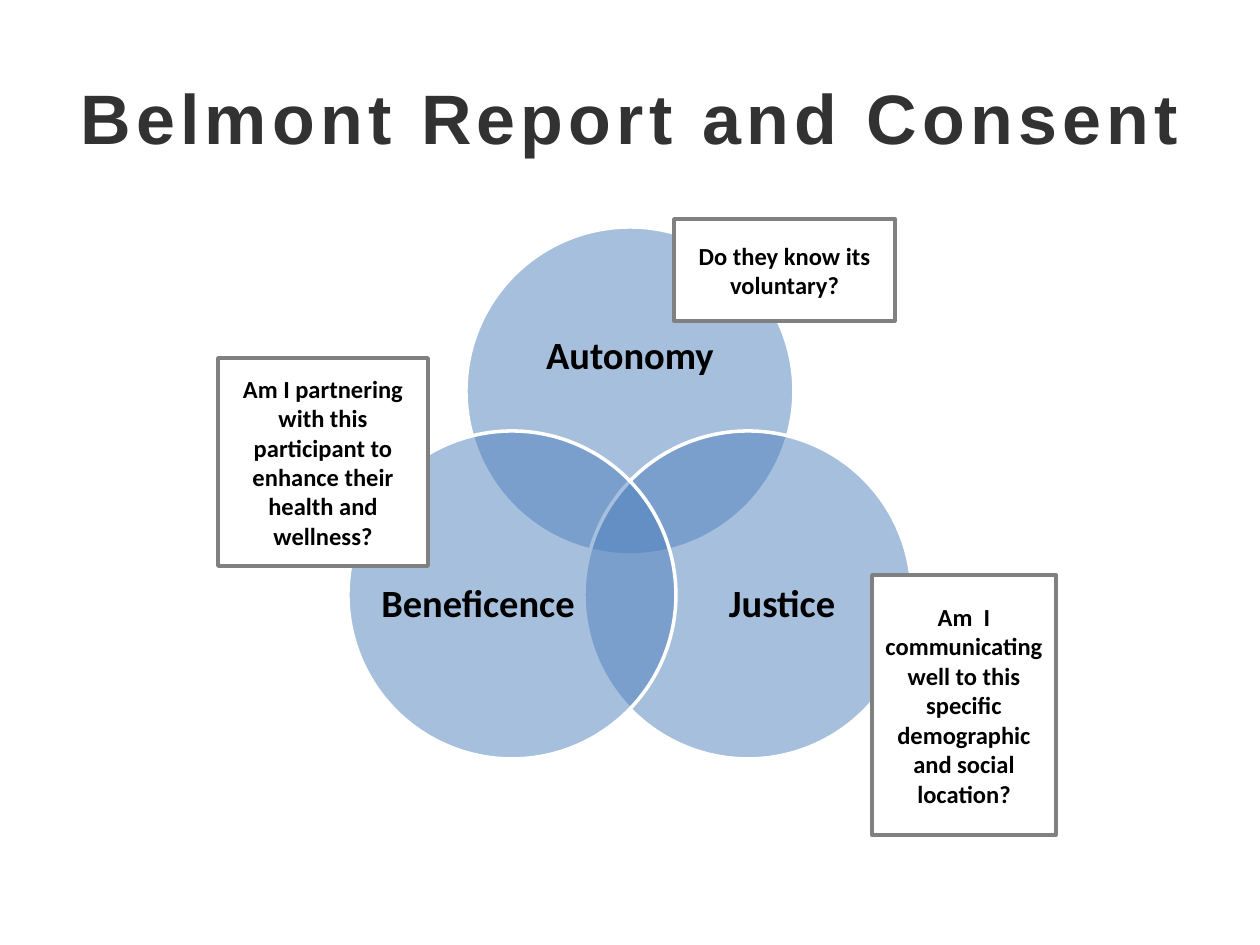
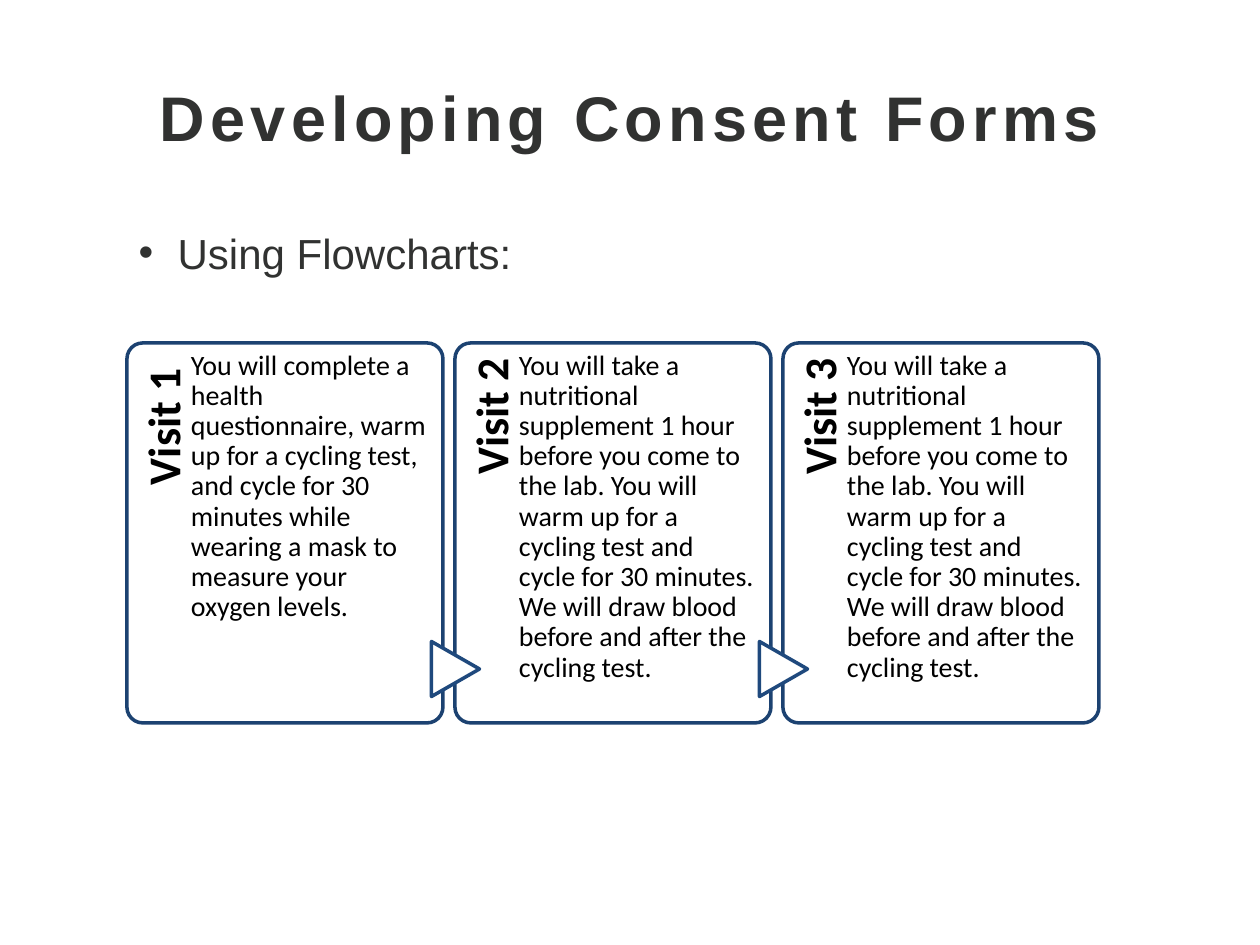
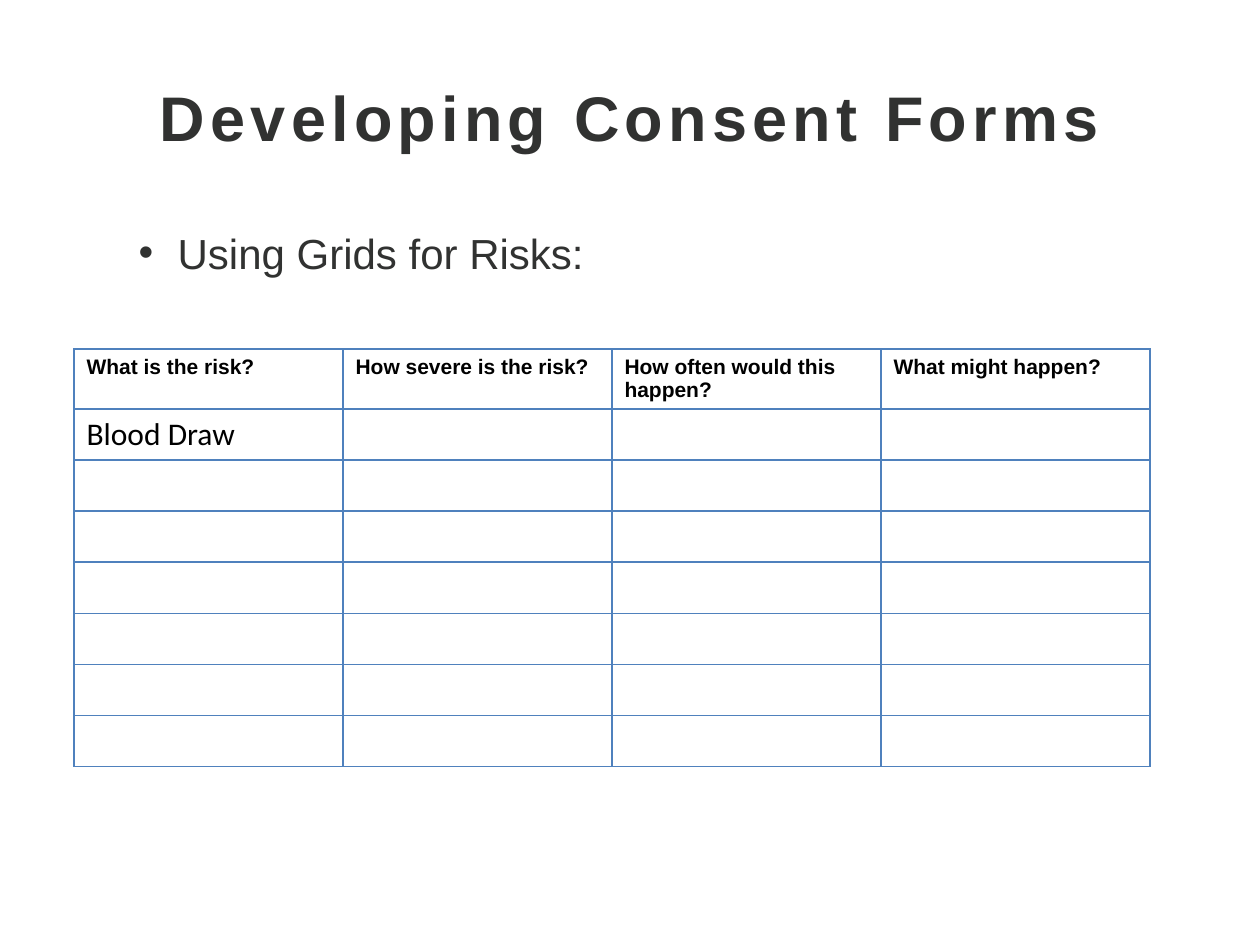
import math

import pptx
import pptx.dml.color
import pptx.enum.shapes
import pptx.enum.text
import pptx.oxml
import pptx.oxml.ns
import pptx.util

PX = 914400 / 126
COLORS = {
    "title": "313231", "text": "000000", "paper": "FFFFFF", "accent": "4F81BD",
    "question_line": "808080", "panel_line": "1C4271", "arrow_line": "1F497D",
}
SHAPE = pptx.enum.shapes.MSO_SHAPE
ALIGN = pptx.enum.text.PP_ALIGN
ANCHOR = pptx.enum.text.MSO_ANCHOR
TITLE_ONLY, TITLE_AND_BODY = 5, 1

CIRCLE_SIZE = 328
VENN_CENTER = (630, 527)
VENN_RADIUS = 136
# Name, angle of the circle, label offset from the diagram center, label size
PRINCIPLES = [
    ("Autonomy", -90, (0, -170), (240, 148)),
    ("Justice", 30, (152, 78), (196, 180)),
    ("Beneficence", 150, (-152, 78), (196, 180)),
]
QUESTIONS = [
    ("Am I partnering with this participant to enhance their health and wellness?",
     (218, 358, 210, 208)),
    ("Do they know its voluntary?", (674, 219, 221, 102)),
    ("Am  I communicating well to this specific demographic and social location?",
     (872, 575, 184, 260)),
]

PANEL_LEFT, PANEL_TOP, PANEL_W, PANEL_H, PANEL_PITCH = 127, 343, 316, 380, 328
SUPPLEMENT_VISIT = (
    "You will take a nutritional supplement 1 hour before you come to the lab. "
    "You will warm up for a cycling test and cycle for 30 minutes. "
    "We will draw blood before and after the cycling test.")
VISITS = [
    ("Visit 1 ", "You will complete a health questionnaire, warm up for a cycling test, "
     "and cycle for 30 minutes while wearing a mask to measure your oxygen levels."),
    ("Visit 2", SUPPLEMENT_VISIT),
    ("Visit 3", SUPPLEMENT_VISIT),
]

RISK_HEADERS = ["What is the risk?", "How severe is the risk?",
                "How often would this happen?", "What might happen?"]
RISKS = ["Blood Draw"]
RISK_ROWS, HEADER_H, ROW_H, COLUMN_W = 7, 60, 51, 269


def px(n):
    return pptx.util.Emu(round(n * PX))


def rgb(name):
    return pptx.dml.color.RGBColor.from_string(COLORS[name])


def add_run(p, text, size, font="Calibri", color="text", bold=False):
    r = p.add_run()
    r.text = text
    r.font.size = pptx.util.Pt(size)
    r.font.name = font
    r.font.bold = bold
    r.font.color.rgb = rgb(color)
    return r


def place(sp, box):
    sp.left, sp.top, sp.width, sp.height = map(px, box)


def add_titled_slide(prs, layout, title, size):
    s = prs.slides.add_slide(prs.slide_layouts[layout])
    sp = s.shapes.title
    place(sp, (63, 38, 1134, 157))
    tf = sp.text_frame
    tf.vertical_anchor = ANCHOR.MIDDLE
    p = tf.paragraphs[0]
    p.alignment = ALIGN.CENTER
    r = add_run(p, title, size, "Arial", "title", True)
    r._r.get_or_add_rPr().set("spc", "300")
    return s


def add_bullet(s, text):
    sp = s.placeholders[1]
    place(sp, (63, 221, 1134, 624))
    p = sp.text_frame.paragraphs[0]
    p.level = 1
    pPr = p._p.get_or_add_pPr()
    pPr.set("marL", str(px(102)))
    pPr.set("indent", str(px(-39)))
    for tag, key, value in (("a:buFont", "typeface", "Arial"), ("a:buChar", "char", "•")):
        pptx.oxml.ns.qn(tag)
        bullet = pptx.oxml.parse_xml(
            f'<{tag} {pptx.oxml.ns.nsdecls("a")} {key}="{value}"/>')
        pPr.append(bullet)
    p.space_before = pptx.util.Pt(0)
    add_run(p, text, 24, "Arial", "title")


def add_shape(s, kind, box, line, fill="paper"):
    sp = s.shapes.add_shape(kind, *map(px, box))
    sp.shadow.inherit = False
    sp.fill.solid()
    sp.fill.fore_color.rgb = rgb(fill)
    sp.line.color.rgb = rgb(line)
    sp.line.width = pptx.util.Pt(2)
    return sp


def add_label(s, text, box, size, bold=False, align=ALIGN.LEFT, anchor=ANCHOR.TOP,
              top=0, right=0):
    """Add a wrapped text box whose only insets are top and right."""
    sp = s.shapes.add_textbox(*map(px, box))
    tf = sp.text_frame
    tf.word_wrap = True
    tf.vertical_anchor = anchor
    tf.margin_left = tf.margin_bottom = 0
    tf.margin_top, tf.margin_right = px(top), px(right)
    p = tf.paragraphs[0]
    p.alignment = align
    p.line_spacing = 0.9
    add_run(p, text, size, bold=bold)
    return sp


def add_principle(s, name, angle, offset, label_size):
    cx, cy = VENN_CENTER
    x = round(cx + VENN_RADIUS * math.cos(math.radians(angle)) - CIRCLE_SIZE / 2)
    y = round(cy + VENN_RADIUS * math.sin(math.radians(angle)) - CIRCLE_SIZE / 2)
    sp = add_shape(s, SHAPE.OVAL, (x, y, CIRCLE_SIZE, CIRCLE_SIZE), "paper", "accent")
    color = sp._element.spPr.find(
        pptx.oxml.ns.qn("a:solidFill")).find(pptx.oxml.ns.qn("a:srgbClr"))
    color.append(pptx.oxml.parse_xml(
        f'<a:alpha {pptx.oxml.ns.nsdecls("a")} val="50000"/>'))
    w, h = label_size
    box = (cx + offset[0] - w / 2, cy + offset[1] - h / 2, w, h)
    add_label(s, name, box, 22, True, ALIGN.CENTER, ANCHOR.MIDDLE)


def add_question(s, text, box):
    sp = add_shape(s, SHAPE.RECTANGLE, box, "question_line")
    tf = sp.text_frame
    tf.word_wrap = True
    tf.vertical_anchor = ANCHOR.MIDDLE
    p = tf.paragraphs[0]
    p.alignment = ALIGN.CENTER
    add_run(p, text, 14, bold=True)


def add_visit(s, i, name, text):
    x = PANEL_LEFT + i * PANEL_PITCH
    panel = add_shape(s, SHAPE.ROUNDED_RECTANGLE, (x, PANEL_TOP, PANEL_W, PANEL_H),
                      "panel_line")
    panel.adjustments[0] = 0.05
    label = add_label(s, name, (x - 123, PANEL_TOP + 123, 311, 63), 26, True,
                      ALIGN.RIGHT, top=13, right=16)
    label.rotation = 270
    if i:
        arrow = add_shape(s, SHAPE.FLOWCHART_EXTRACT, (x - 27, PANEL_TOP + 302, 55, 48),
                          "arrow_line")
        arrow.rotation = 90
    add_label(s, text, (x + 64, PANEL_TOP, 236, PANEL_H), 16, top=8)


def style_cell(cell):
    cell.fill.solid()
    cell.fill.fore_color.rgb = rgb("paper")
    tcPr = cell._tc.get_or_add_tcPr()
    for i, side in enumerate(("lnL", "lnR", "lnT", "lnB")):
        tcPr.insert(i, pptx.oxml.parse_xml(
            f'<a:{side} {pptx.oxml.ns.nsdecls("a")} w="12700"><a:solidFill>'
            f'<a:srgbClr val="{COLORS["accent"]}"/></a:solidFill></a:{side}>'))


def add_risk_table(s):
    n = len(RISK_HEADERS)
    box = (74, 349, n * COLUMN_W, HEADER_H + RISK_ROWS * ROW_H)
    table = s.shapes.add_table(RISK_ROWS + 1, n, *map(px, box)).table
    table.first_row = table.horz_banding = False
    for column in table.columns:
        column.width = px(COLUMN_W)
    for i, row in enumerate(table.rows):
        row.height = px(ROW_H if i else HEADER_H)
    for cell in table.iter_cells():
        style_cell(cell)
    for j, text in enumerate(RISK_HEADERS):
        add_run(table.cell(0, j).text_frame.paragraphs[0], text, 12, "Arial", bold=True)
    for i, text in enumerate(RISKS, 1):
        add_run(table.cell(i, 0).text_frame.paragraphs[0], text, 18)


def main():
    prs = pptx.Presentation()
    prs.slide_width, prs.slide_height = px(1260), px(945)

    s = add_titled_slide(prs, TITLE_ONLY, "Belmont Report and Consent", 40)
    for principle in PRINCIPLES:
        add_principle(s, *principle)
    for text, box in QUESTIONS:
        add_question(s, text, box)

    s = add_titled_slide(prs, TITLE_AND_BODY, "Developing Consent Forms", 36)
    add_bullet(s, "Using Flowcharts:")
    for i, (name, text) in enumerate(VISITS):
        add_visit(s, i, name, text)

    s = add_titled_slide(prs, TITLE_AND_BODY, "Developing Consent Forms", 36)
    add_bullet(s, "Using Grids for Risks:")
    add_risk_table(s)

    prs.save("out.pptx")


if __name__ == "__main__":
    main()
